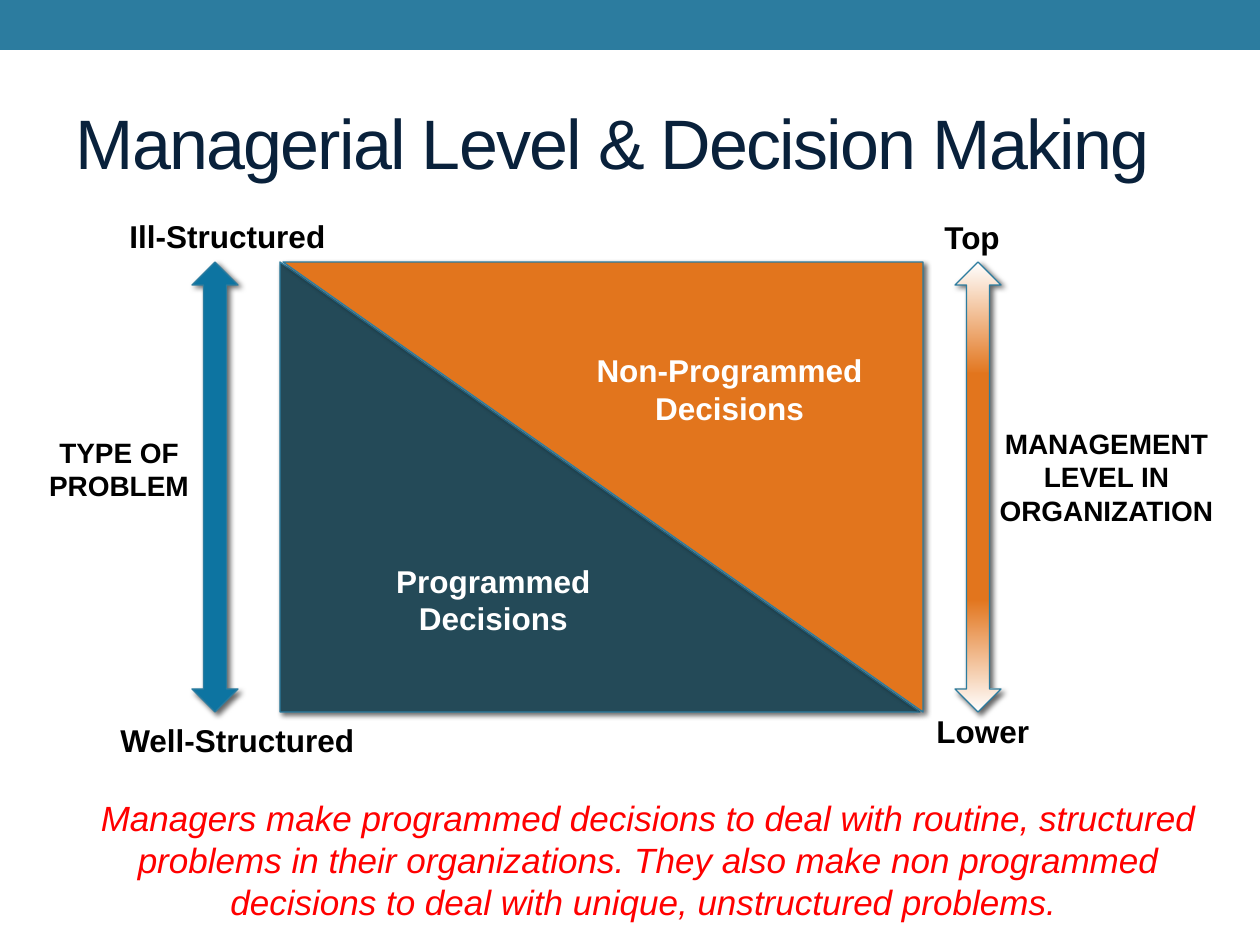
from dataclasses import dataclass

from pptx import Presentation
from pptx.dml.color import RGBColor
from pptx.enum.shapes import MSO_SHAPE
from pptx.enum.text import MSO_ANCHOR, MSO_AUTO_SIZE, PP_ALIGN
from pptx.oxml import parse_xml
from pptx.oxml.ns import nsdecls, qn
from pptx.util import Emu, Pt

RECTANGLE = MSO_SHAPE.RECTANGLE
TRIANGLE = MSO_SHAPE.RIGHT_TRIANGLE
ARROW = MSO_SHAPE.UP_DOWN_ARROW
LEFT, CENTER = PP_ALIGN.LEFT, PP_ALIGN.CENTER
TOP, MIDDLE = MSO_ANCHOR.TOP, MSO_ANCHOR.MIDDLE
NO_AUTOFIT = MSO_AUTO_SIZE.NONE

TITLE_ONLY = 5
EMU_PER_PX = 914400 / 126
DIAGRAM_TOP, DIAGRAM_HEIGHT = 262, 450


@dataclass(frozen=True)
class Theme:
    font: str = "Arial"
    band: str = "2C7C9F"
    title: str = "09213B"
    programmed: str = "244A58"
    non_programmed: str = "E2751D"
    problem_arrow: str = "0D74A1"
    light: str = "FFFFFF"
    dark: str = "000000"
    summary: str = "FF0000"
    title_size: int = 40
    summary_size: int = 20
    label_size: int = 18
    axis_size: int = 16


THEME = Theme()


def px(length):
    return Emu(round(length * EMU_PER_PX))


def write(shape, text, size, color, align=CENTER, anchor=TOP, bold=False, italic=False):
    frame = shape.text_frame
    frame.text = text
    frame.vertical_anchor = anchor
    paragraph = frame.paragraphs[0]
    paragraph.alignment = align
    font = paragraph.runs[0].font
    font.name = THEME.font
    font.size = Pt(size)
    font.bold = bold
    font.italic = italic
    font.color.rgb = RGBColor.from_string(color)
    return paragraph


def add_title(slide, text, box):
    title = slide.shapes.title
    title.left, title.top, title.width, title.height = map(px, box)
    paragraph = write(title, text, THEME.title_size, THEME.title, LEFT, MIDDLE)
    title.text_frame.auto_size = NO_AUTOFIT
    paragraph.runs[0].font._element.set("spc", "-100")


def add_text(slide, text, box, size, color, wrap=True, **style):
    text_box = slide.shapes.add_textbox(*map(px, box))
    text_box.text_frame.word_wrap = wrap
    return write(text_box, text, size, color, **style)


def add_flat_shape(slide, kind, box, color):
    shape = slide.shapes.add_shape(kind, *map(px, box))
    shape.shadow.inherit = False
    shape.fill.solid()
    shape.fill.fore_color.rgb = RGBColor.from_string(color)
    shape.line.fill.background()
    return shape


def add_diagram_shape(slide, kind, left, width, color):
    """Add an outlined shape with a soft shadow, as tall as the diagram."""
    box = (left, DIAGRAM_TOP, width, DIAGRAM_HEIGHT)
    shape = add_flat_shape(slide, kind, box, color)
    shape.line.color.rgb = RGBColor.from_string(THEME.band)
    shape.line.width = Pt(0.75)
    effects = shape._element.spPr.find(qn("a:effectLst"))
    effects.append(parse_xml(
        f'<a:outerShdw {nsdecls("a")} blurRad="{Pt(3)}" dist="{Pt(2)}" '
        'dir="2700000" rotWithShape="0"><a:srgbClr val="000000">'
        '<a:alpha val="60000"/></a:srgbClr></a:outerShdw>'))
    return shape


def fade_ends(shape, middle, end):
    """Fill the shape top to bottom with a colour that fades at both ends."""
    shape.fill.gradient()
    shape.fill.gradient_angle = 90
    stops = shape._element.spPr.find(".//" + qn("a:gsLst"))
    for stop in list(stops):
        stops.remove(stop)
    for percent, color in ((0, end), (25, middle), (75, middle), (100, end)):
        stops.append(parse_xml(
            f'<a:gs {nsdecls("a")} pos="{percent * 1000}">'
            f'<a:srgbClr val="{color}"/></a:gs>'))


def add_decision_areas(slide):
    programmed = add_diagram_shape(slide, TRIANGLE, 280, 640, THEME.programmed)
    write(programmed, "Programmed Decisions", THEME.label_size, THEME.light,
          anchor=MIDDLE, bold=True)
    non_programmed = add_diagram_shape(slide, TRIANGLE, 283, 640, THEME.non_programmed)
    non_programmed.rotation = 180
    add_text(slide, "Non-Programmed Decisions", (563, 345, 333, 89),
             THEME.label_size, THEME.light, bold=True)


def add_axes(slide):
    level_arrow = add_diagram_shape(slide, ARROW, 955, 46, THEME.non_programmed)
    fade_ends(level_arrow, THEME.non_programmed, THEME.light)
    add_diagram_shape(slide, ARROW, 192, 46, THEME.problem_arrow)

    for text, box in (
        ("TYPE OF PROBLEM", (15, 429, 208, 81)),
        ("MANAGEMENT LEVEL IN ORGANIZATION", (961, 420, 291, 115)),
    ):
        add_text(slide, text, box, THEME.axis_size, THEME.dark, bold=True)

    for text, box in (
        ("Ill-Structured", (117, 211, 223, 50)),
        ("Well-Structured", (108, 715, 262, 50)),
        ("Top", (932, 212, 82, 50)),
        ("Lower", (924, 706, 120, 50)),
    ):
        add_text(slide, text, box, THEME.label_size, THEME.dark,
                 wrap=False, align=LEFT, bold=True)


def main():
    presentation = Presentation()
    presentation.slide_width, presentation.slide_height = px(1260), px(945)
    slide = presentation.slides.add_slide(presentation.slide_layouts[TITLE_ONLY])

    add_flat_shape(slide, RECTANGLE, (0, 0, 1260, 50), THEME.band)
    add_title(slide, "Managerial Level & Decision Making", (63, 73, 1134, 136))
    add_decision_areas(slide)
    add_axes(slide)
    summary = add_text(
        slide,
        "Managers make programmed decisions to deal with routine, structured "
        "problems in their organizations. They also make non programmed "
        "decisions to deal with unique, unstructured problems. ",
        (63, 790, 1171, 155), THEME.summary_size, THEME.summary, italic=True)
    summary.space_before = Pt(4)

    presentation.save("out.pptx")


if __name__ == "__main__":
    main()
